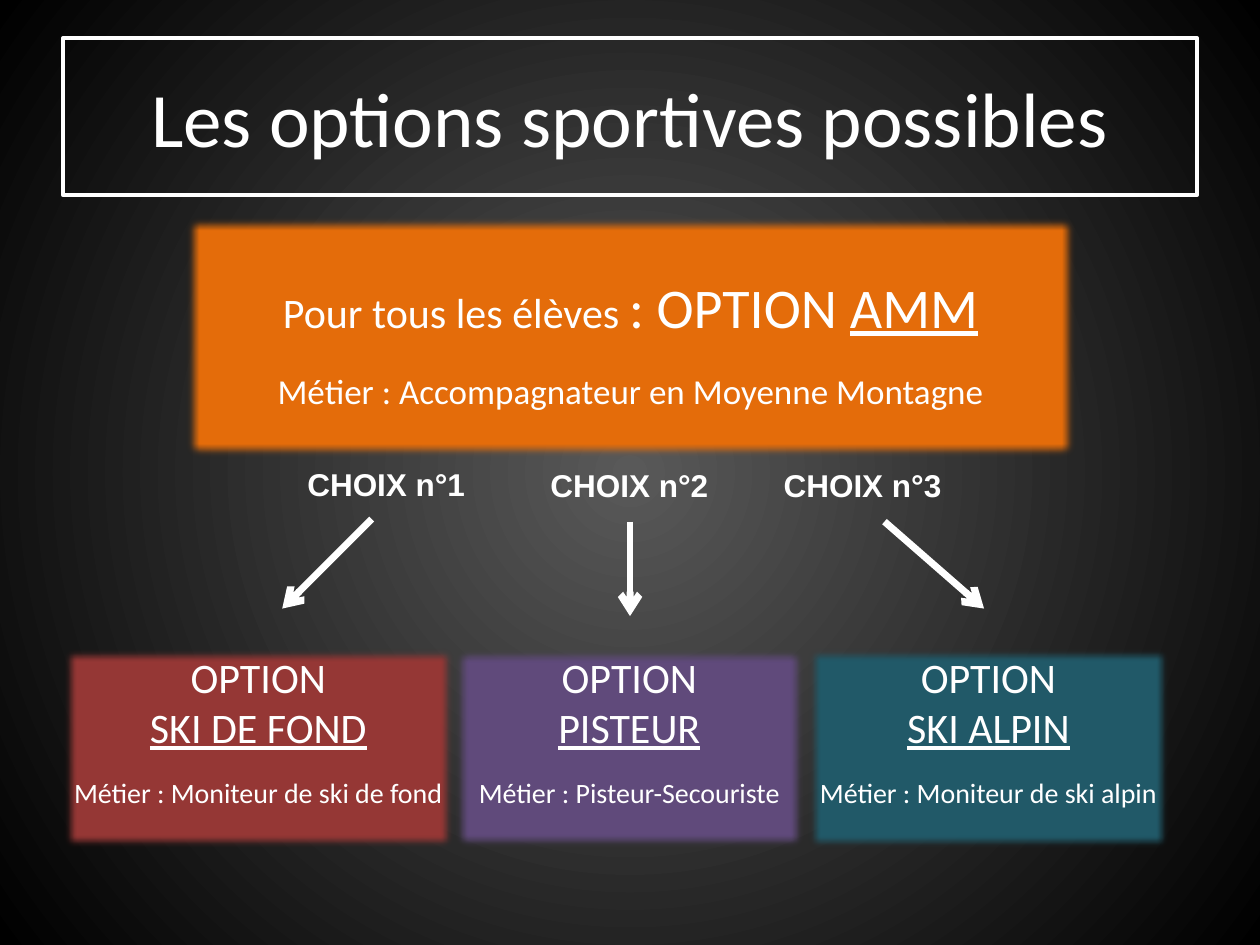
from dataclasses import dataclass
from lxml.etree import SubElement
from pptx import Presentation
from pptx.dml.color import RGBColor
from pptx.enum.shapes import MSO_CONNECTOR, MSO_SHAPE
from pptx.enum.text import MSO_ANCHOR, PP_ALIGN
from pptx.oxml import parse_xml
from pptx.oxml.ns import nsdecls, qn
from pptx.util import Inches, Pt


@dataclass(frozen=True)
class Theme:
    """Colours, fonts and type sizes."""
    ink: str = "FFFFFF"
    glow: str = "595959"
    dark: str = "000000"
    amm: str = "E46C0A"
    fond: str = "953735"
    pist: str = "604A7B"
    alpin: str = "215968"
    body: str = "Calibri"
    label: str = "Arial"
    title: int = 44
    big: int = 32
    head: int = 24
    job: int = 20
    small: int = 16
    pick: int = 18


THEME = Theme()
COLS, ROWS = 100, 75
WIDE, HIGH = Inches(10), Inches(7.5)


def grid(col, row):
    """Turn columns and rows into lengths."""
    return round(col * WIDE / COLS), round(row * HIGH / ROWS)


def place(box):
    """Turn a grid box into left, top, width and height."""
    return (*grid(*box[:2]), *grid(*box[2:]))


def tint(hue):
    """Give a colour from its hex name."""
    return RGBColor.from_string(hue)


def apply(item, form):
    """Set each format value on an item."""
    for name, value in form.items():
        setattr(item, name, value)


def write(frame, lines, font=THEME.body, **form):
    """Fill a frame with centred lines of (gap, runs)."""
    apply(frame, {"word_wrap": True, **form})
    for num, (gap, runs) in enumerate(lines):
        para = frame.add_paragraph() if num else frame.paragraphs[0]
        apply(para, {"alignment": PP_ALIGN.CENTER, "space_before": Pt(gap)})
        for text, size, form in runs:
            run = para.add_run()
            run.text = text
            apply(run.font, {"name": font, "size": Pt(size), **form})
            run.font.color.rgb = tint(THEME.ink)


def backdrop(slide):
    """Lay a round gradient behind the slide."""
    slide.element.cSld.insert(0, parse_xml(
        f'<p:bg {nsdecls("p", "a")}><p:bgPr><a:gradFill rotWithShape="1"><a:gsLst>'
        f'<a:gs pos="0"><a:srgbClr val="{THEME.glow}"/></a:gs>'
        f'<a:gs pos="100000"><a:srgbClr val="{THEME.dark}"/></a:gs></a:gsLst>'
        '<a:path path="circle"><a:fillToRect l="50000" t="50000" r="50000" b="50000"/>'
        '</a:path></a:gradFill><a:effectLst/></p:bgPr></p:bg>'))


def banner(slide, box, text):
    """Draw the framed title."""
    shape = slide.shapes.add_shape(MSO_SHAPE.RECTANGLE, *place(box))
    shape.shadow.inherit = False
    shape.fill.background()
    shape.line.color.rgb = tint(THEME.ink)
    shape.line.width = Pt(2)
    write(shape.text_frame, [(0, [(text, THEME.title, {})])],
          vertical_anchor=MSO_ANCHOR.MIDDLE)


def panel(slide, box, hue, lines, top=0.05):
    """Draw a soft-edged block of lines."""
    shape = slide.shapes.add_shape(MSO_SHAPE.RECTANGLE, *place(box))
    shape.shadow.inherit = False
    shape.fill.solid()
    shape.fill.fore_color.rgb = tint(hue)
    shape.line.fill.background()
    glow = shape.element.spPr.find(qn("a:effectLst"))
    SubElement(glow, qn("a:softEdge"), rad=str(Pt(5)))
    write(shape.text_frame, lines, vertical_anchor=MSO_ANCHOR.TOP,
          margin_top=Inches(top))


def trunk(slide, box):
    """Draw the option shared by all pupils."""
    panel(slide, box, THEME.amm, [
        (0, [("Pour tous les élèves ", THEME.head, {}),
             (": OPTION ", THEME.big, {}),
             ("AMM", THEME.big, {"underline": True})]),
        (17, [("Métier : Accompagnateur en Moyenne Montagne", THEME.job, {})]),
    ], top=0.46)


def option(slide, box, hue, name, job):
    """Draw one option with its trade."""
    panel(slide, box, hue, [
        (0, [("OPTION", THEME.head, {})]),
        (0, [(name, THEME.head, {"underline": True})]),
        (13.4, [(f"Métier : {job}", THEME.small, {})]),
    ])


def choice(slide, box, num, start, end):
    """Draw a choice label and its arrow."""
    label = slide.shapes.add_textbox(*place(box))
    write(label.text_frame, [(0, [(f"CHOIX n°{num}", THEME.pick, {"bold": True})])],
          THEME.label)
    arrow = slide.shapes.add_connector(
        MSO_CONNECTOR.STRAIGHT, *grid(*start), *grid(*end))
    arrow.line.color.rgb = tint(THEME.ink)
    arrow.line.width = Pt(4)
    SubElement(arrow.line._get_or_add_ln(), qn("a:tailEnd"), type="arrow")
    SubElement(arrow._element.spPr, qn("a:effectLst"))


def main():
    """Build and save the slide."""
    deck = Presentation()
    apply(deck, {"slide_width": WIDE, "slide_height": HIGH})
    slide = deck.slides.add_slide(deck.slide_layouts[6])
    backdrop(slide)
    banner(slide, (5, 3, 90, 12.5), "Les options sportives possibles")
    trunk(slide, (14.6, 17, 70.9, 19.5))
    for left, width, hue, name, job in (
            (4.8, 31.4, THEME.fond, "SKI DE FOND", "Moniteur de ski de fond"),
            (63.9, 29.1, THEME.alpin, "SKI ALPIN", "Moniteur de ski alpin"),
            (35.8, 28.3, THEME.pist, "PISTEUR", "Pisteur-Secouriste")):
        option(slide, (left, 51.2, width, 16.4), hue, name, job)
    for num, (left, top, start, end) in enumerate((
            (22.4, 36.4, (29.5, 41.2), (22.4, 48.3)),
            (41.7, 36.5, (50, 41.4), (50, 48.9)),
            (60.2, 36.5, (70.2, 41.4), (78.1, 48.3))), 1):
        choice(slide, (left, top, 16.5, 4), num, start, end)
    deck.save("out.pptx")


if __name__ == "__main__":
    main()
